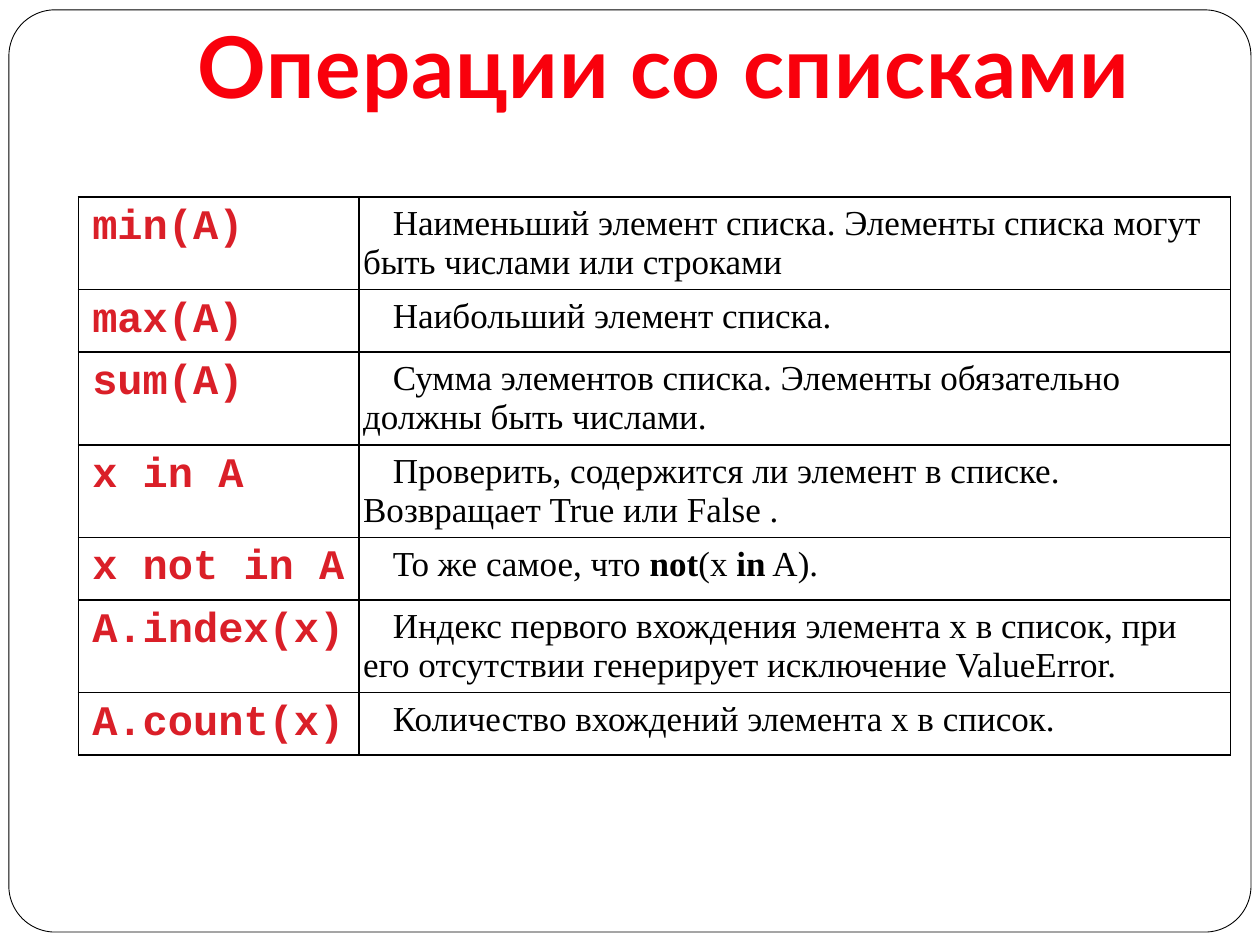
"""Build a slide with a reference table of list operations."""
from dataclasses import dataclass

from lxml import etree
from pptx import Presentation
from pptx.dml.color import RGBColor
from pptx.enum.shapes import MSO_SHAPE
from pptx.enum.text import MSO_ANCHOR, MSO_AUTO_SIZE, PP_ALIGN
from pptx.oxml.ns import qn
from pptx.util import Cm, Pt

ROUNDED = MSO_SHAPE.ROUNDED_RECTANGLE
BOTTOM = MSO_ANCHOR.BOTTOM
CENTER = PP_ALIGN.CENTER
NO_AUTOFIT = MSO_AUTO_SIZE.NONE

COLORS = {"paper": "FFFFFF", "ink": "000000", "title": "F9000C", "code": "DA1F28"}
TITLE_ONLY = 5
COLUMN_WIDTHS = (Cm(5.66), Cm(17.57))
SHORT_ROW, TALL_ROW = Cm(1.25), Cm(1.85)


@dataclass(frozen=True)
class TextStyle:
    font: str
    size: float
    color: str
    indent: float
    bold: bool


@dataclass(frozen=True)
class Operation:
    code: str
    meaning: tuple[str, ...]
    height: int = SHORT_ROW


CODE = TextStyle("Courier New", 24, "code", 0.2, True)
MEANING = TextStyle("Times New Roman", 20, "ink", 0.6, False)
KEYWORDS = ("not", "in")

OPERATIONS = (
    Operation("min(A)", ("Наименьший элемент списка. Элементы списка могут быть числами или строками",), TALL_ROW),
    Operation("max(A)", ("Наибольший элемент списка.",)),
    Operation("sum(A)", ("Сумма элементов списка. Элементы обязательно должны быть числами.",), TALL_ROW),
    Operation("x in A", ("Проверить, содержится ли элемент в списке. Возвращает True или False .",), TALL_ROW),
    Operation("x not in A", ("То же самое, что ", "not", "(x ", "in", " A).")),
    Operation(
        "A.index(x)",
        ("Индекс первого вхождения элемента x в список, при его отсутствии генерирует исключение ValueError.",),
        TALL_ROW,
    ),
    Operation("A.count(x)", ("Количество вхождений элемента x в список.",)),
)


def rgb(name: str) -> RGBColor:
    return RGBColor.from_string(COLORS[name])


def add_frame(slide) -> None:
    frame = slide.shapes.add_shape(ROUNDED, Cm(0.18), Cm(0.2), Cm(25.04), Cm(18.59))
    frame.adjustments[0] = 0.05
    frame.shadow.inherit = False
    frame.fill.solid()
    frame.fill.fore_color.rgb = rgb("paper")
    frame.line.color.rgb = rgb("ink")
    frame.line.width = Pt(0.5)
    slide.shapes._spTree.insert(2, frame._element)


def format_title(title) -> None:
    title.left, title.top, title.width, title.height = Cm(2.59), Cm(0.79), Cm(21.59), Cm(1.78)
    body = title.text_frame
    body.text = "Операции со списками"
    body.word_wrap = True
    body.auto_size = NO_AUTOFIT
    body.vertical_anchor = BOTTOM
    body.margin_bottom = Cm(0.25)
    heading = body.paragraphs[0]
    heading.alignment = CENTER
    heading.font.name = "Lato"
    heading.font.size = Pt(48.6)
    heading.font.bold = True
    heading.font.color.rgb = rgb("title")
    heading.runs[0].font._element.set("spc", "50")


def add_borders(cell) -> None:
    properties = cell._tc.get_or_add_tcPr()
    for side in ("lnL", "lnR", "lnT", "lnB"):
        border = etree.SubElement(properties, qn(f"a:{side}"), w=str(Pt(1)))
        fill = etree.SubElement(border, qn("a:solidFill"))
        etree.SubElement(fill, qn("a:srgbClr"), val=COLORS["ink"])


def fill_cell(cell, pieces: tuple[str, ...], style: TextStyle) -> None:
    add_borders(cell)
    cell.fill.solid()
    cell.fill.fore_color.rgb = rgb("paper")
    cell.margin_left = cell.margin_right = Cm(0.08)
    cell.margin_top = cell.margin_bottom = Cm(0.15)
    paragraph = cell.text_frame.paragraphs[0]
    paragraph._p.get_or_add_pPr().set("indent", str(Cm(style.indent)))
    paragraph.font.name = style.font
    paragraph.font.size = Pt(style.size)
    paragraph.font.color.rgb = rgb(style.color)
    paragraph.font.bold = style.bold
    for piece in pieces:
        run = paragraph.add_run()
        run.text = piece
        if piece in KEYWORDS:
            run.font.bold = True


def add_operations(slide) -> None:
    total_height = sum(operation.height for operation in OPERATIONS)
    table = slide.shapes.add_table(
        len(OPERATIONS), len(COLUMN_WIDTHS), Cm(1.58), Cm(3.97), sum(COLUMN_WIDTHS), total_height
    ).table
    table.first_row = table.horz_banding = False
    for column, width in zip(table.columns, COLUMN_WIDTHS):
        column.width = width
    for row, operation in zip(table.rows, OPERATIONS):
        row.height = operation.height
        fill_cell(row.cells[0], (operation.code,), CODE)
        fill_cell(row.cells[1], operation.meaning, MEANING)


def main() -> None:
    presentation = Presentation()
    presentation.slide_width, presentation.slide_height = Cm(25.4), Cm(19.05)
    slide = presentation.slides.add_slide(presentation.slide_layouts[TITLE_ONLY])
    add_frame(slide)
    format_title(slide.shapes.title)
    add_operations(slide)
    presentation.save("out.pptx")


if __name__ == "__main__":
    main()
